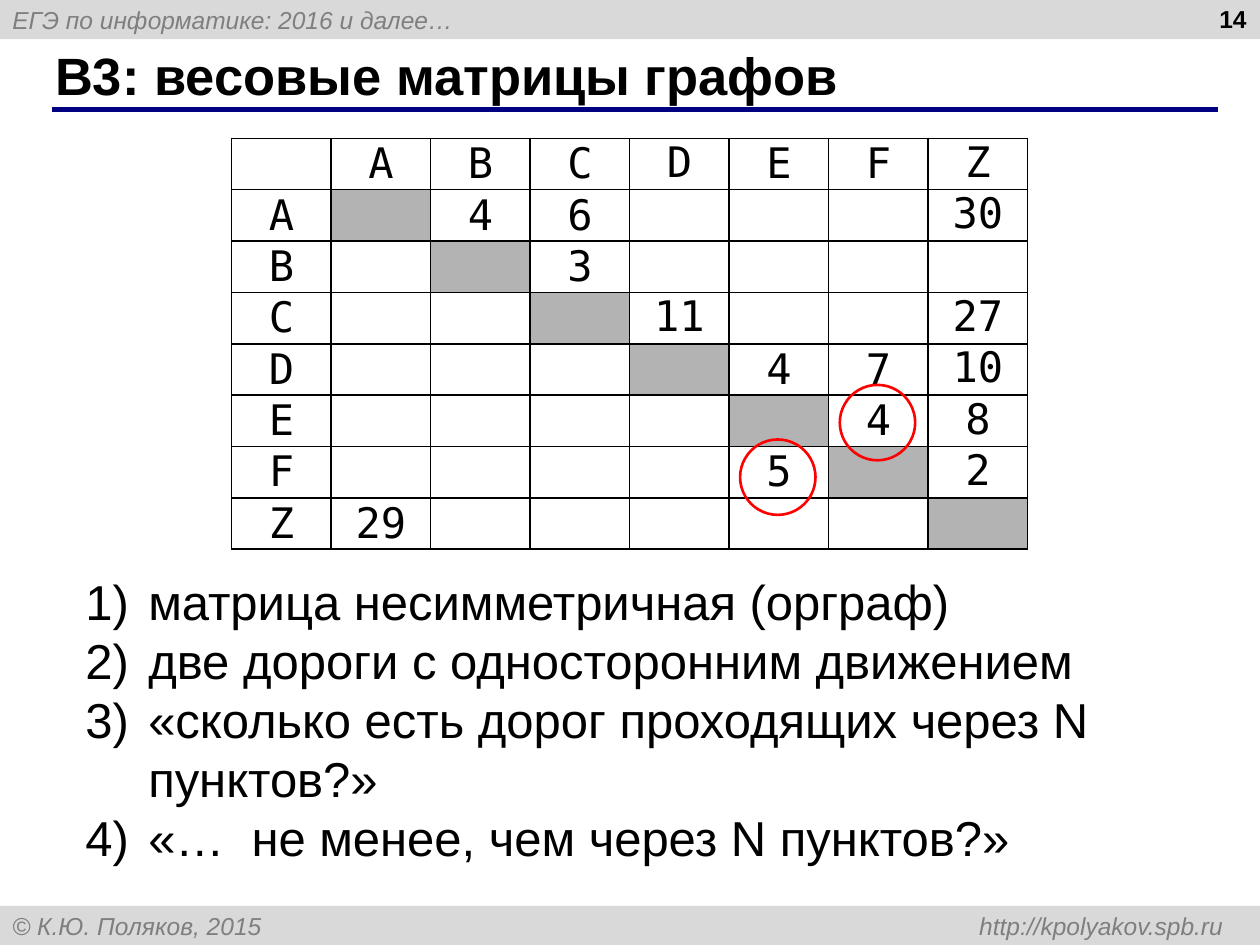
from lxml.etree import SubElement
from pptx import Presentation
from pptx.dml.color import RGBColor
from pptx.enum.shapes import MSO_CONNECTOR, MSO_SHAPE
from pptx.enum.text import MSO_ANCHOR, PP_ALIGN
from pptx.oxml.ns import qn
from pptx.util import Cm, Pt


def color(hex_value):
    return RGBColor.from_string(hex_value)


def add_run(paragraph, text, size, hex_value="000000", name="Arial", bold=False, italic=False):
    run = paragraph.add_run()
    run.text = text
    run.font.name = name
    run.font.size = Pt(size)
    run.font.bold = bold
    run.font.italic = italic
    run.font.color.rgb = color(hex_value)


presentation = Presentation()
presentation.slide_width = Cm(25.4)
presentation.slide_height = Cm(19.05)
slide = presentation.slides.add_slide(presentation.slide_layouts[6])
shapes = slide.shapes

# Header and footer bars
bars = [
    (0, "ЕГЭ по информатике: 2016 и далее…"),
    (18.26, "© К.Ю. Поляков, 2015 \thttp://kpolyakov.spb.ru"),
]
for top, text in bars:
    bar = shapes.add_shape(MSO_SHAPE.RECTANGLE, 0, Cm(top), Cm(25.4), Cm(0.79))
    bar.shadow.inherit = False
    bar.fill.solid()
    bar.fill.fore_color.rgb = color("D9D9D9")
    bar.line.fill.background()
    bar.text_frame.vertical_anchor = MSO_ANCHOR.MIDDLE
    paragraph = bar.text_frame.paragraphs[0]
    paragraph.alignment = PP_ALIGN.LEFT
    if "\t" in text:
        tab_list = SubElement(paragraph._p.get_or_add_pPr(), qn("a:tabLst"))
        SubElement(tab_list, qn("a:tab"), pos=str(Cm(24.41)), algn="r")
    add_run(paragraph, text, 14, "7F7F7F", italic=True)

# Title, its rule and the slide number
rule = shapes.add_connector(MSO_CONNECTOR.STRAIGHT, Cm(1.04), Cm(2.21), Cm(24.56), Cm(2.21))
rule.line.color.rgb = color("000080")
rule.line.width = Pt(3)
SubElement(rule._element.spPr, qn("a:effectLst"))

title = shapes.add_textbox(Cm(0.86), Cm(0.84), Cm(23.27), Cm(1.32))
title.text_frame.word_wrap = True
title.text_frame.vertical_anchor = MSO_ANCHOR.MIDDLE
add_run(title.text_frame.paragraphs[0], "B3: весовые матрицы графов", 30, bold=True)

number = shapes.add_textbox(Cm(19.46), Cm(-0.05), Cm(5.92), Cm(1.32))
number.text_frame.word_wrap = True
number.text_frame.paragraphs[0].alignment = PP_ALIGN.RIGHT
add_run(number.text_frame.paragraphs[0], "14", 14, bold=True)

# Weight matrix: one row and one column for each vertex
vertices = "ABCDEFZ"
weights = {
    "AB": 4, "AC": 6, "AZ": 30, "BC": 3, "CD": 11, "CZ": 27, "DE": 4, "DF": 7,
    "DZ": 10, "EF": 4, "EZ": 8, "FE": 5, "FZ": 2, "ZA": 29,
}
count = len(vertices) + 1
table = shapes.add_table(count, count, Cm(4.67), Cm(2.79), Cm(16.05), Cm(8.28)).table
table.first_row = False
table.horz_banding = False
for row in range(count):
    for column in range(count):
        cell = table.cell(row, column)
        cell.margin_left = cell.margin_right = Cm(0.18)
        cell.margin_top = cell.margin_bottom = 0
        upper_anchored = column == count - 1 or (column == 4 and row < 4)
        cell.vertical_anchor = MSO_ANCHOR.TOP if upper_anchored else MSO_ANCHOR.MIDDLE
        for side in ("lnL", "lnR", "lnT", "lnB"):
            border = SubElement(cell._tc.get_or_add_tcPr(), qn("a:" + side), w=str(Pt(1)))
            border_fill = SubElement(border, qn("a:solidFill"))
            SubElement(border_fill, qn("a:srgbClr"), val="000000")
        if row == column > 0:
            cell.fill.solid()
            cell.fill.fore_color.rgb = color("B3B3B3")
        else:
            cell.fill.background()
        if row and column:
            text = str(weights.get(vertices[row - 1] + vertices[column - 1], ""))
        elif row or column:
            text = vertices[row + column - 1]
        else:
            text = ""
        if text:
            paragraph = cell.text_frame.paragraphs[0]
            paragraph.alignment = PP_ALIGN.CENTER
            add_run(paragraph, text, 24, name="DejaVu Sans Mono")

# Numbered conclusions
conclusions = [
    "матрица несимметричная (орграф)",
    "две дороги с односторонним движением",
    "«сколько есть дорог проходящих через N пунктов?»",
    "«…  не менее, чем через N пунктов?»",
]
text_frame = shapes.add_textbox(Cm(1.47), Cm(11.4), Cm(22.81), Cm(6.25)).text_frame
text_frame.word_wrap = True
for index, text in enumerate(conclusions):
    paragraph = text_frame.add_paragraph() if index else text_frame.paragraphs[0]
    properties = paragraph._p.get_or_add_pPr()
    properties.set("marL", str(Cm(1.27)))
    properties.set("indent", str(Cm(-1.27)))
    SubElement(properties, qn("a:buFont"), typeface="+mj-lt")
    SubElement(properties, qn("a:buAutoNum"), type="arabicParenR")
    add_run(paragraph, text, 28)

# Rings around the one-way roads between E and F
for left, top in [(16.93, 7.76), (14.92, 8.86)]:
    ring = shapes.add_shape(MSO_SHAPE.OVAL, Cm(left), Cm(top), Cm(1.52), Cm(1.52))
    ring.shadow.inherit = False
    ring.fill.background()
    ring.line.color.rgb = color("FF0000")
    ring.line.width = Pt(1.5)

presentation.save("out.pptx")
